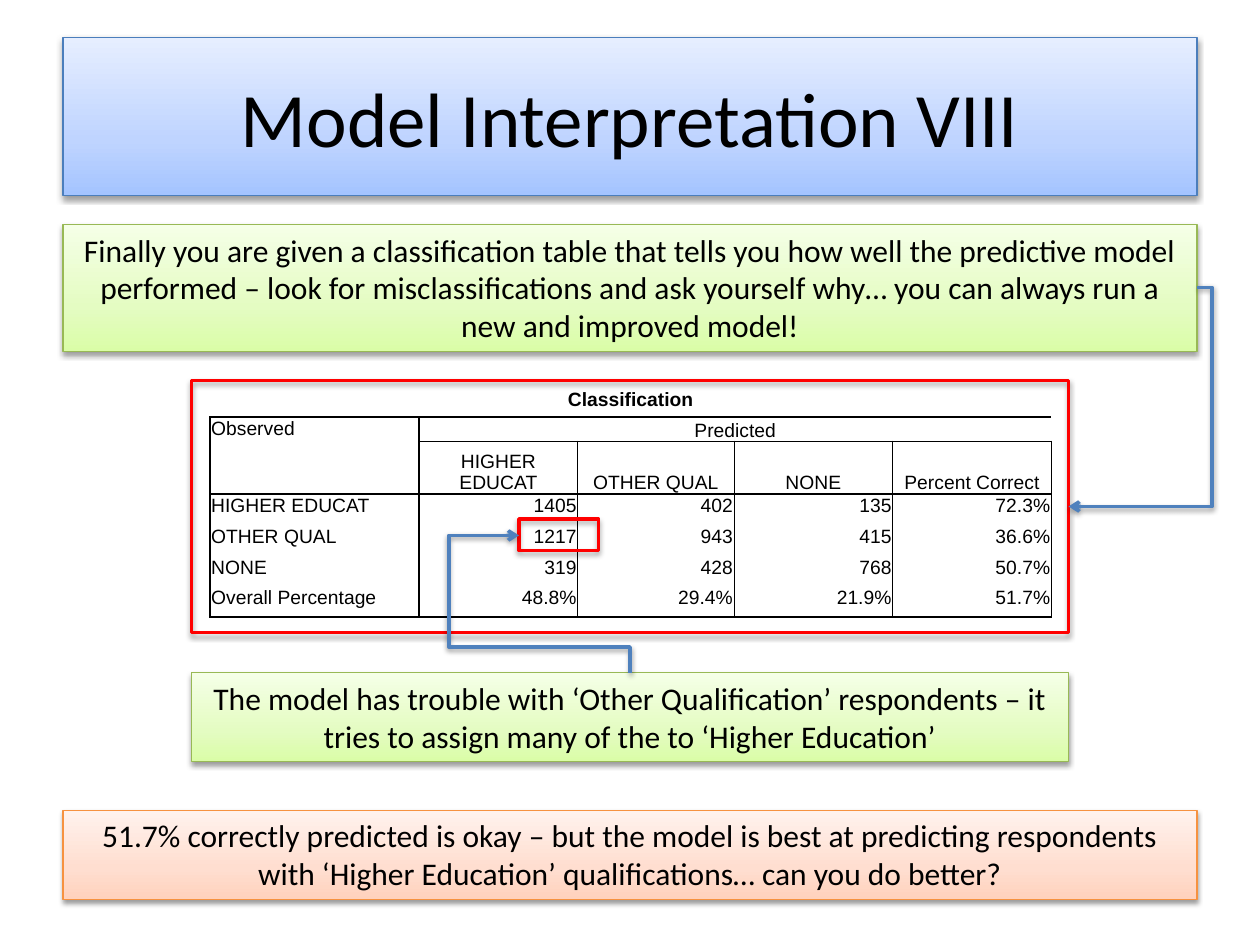
"""Build the slide that interprets the classification table of a predictive model."""
from lxml.etree import SubElement
from pptx import Presentation
from pptx.dml.color import RGBColor
from pptx.enum.shapes import MSO_CONNECTOR, MSO_SHAPE
from pptx.enum.text import MSO_ANCHOR, MSO_AUTO_SIZE, PP_ALIGN
from pptx.oxml.ns import qn
from pptx.util import Pt

LEFT, CENTER, RIGHT = PP_ALIGN.LEFT, PP_ALIGN.CENTER, PP_ALIGN.RIGHT
TOP, MIDDLE, BOTTOM = MSO_ANCHOR.TOP, MSO_ANCHOR.MIDDLE, MSO_ANCHOR.BOTTOM
RECTANGLE, ELBOW = MSO_SHAPE.RECTANGLE, MSO_CONNECTOR.ELBOW
GROW = MSO_AUTO_SIZE.SHAPE_TO_FIT_TEXT

COLORS = {"text": "000000", "blue": "4B7EBC", "green": "98B955", "orange": "F69240",
          "red": "FF0000", "arrow": "4F81BD"}
GRADIENTS = {"blue": ("A4C4FF", "BFD4FF", "E6EEFF"),
             "green": ("DAFDA7", "E4FCC2", "F5FFE7"),
             "orange": ("FFD2BD", "FFDED0", "FFF2ED")}
STOPS = (0, 35, 100)

TITLE = ("Model Interpretation VIII", (36, 21.6, 648, 90))
NOTES = [
    ("Finally you are given a classification table that tells you how well the predictive "
     "model performed – look for misclassifications and ask yourself why… you can always "
     "run a new and improved model!", "green", (36, 128.2, 648, 72.7)),
    ("The model has trouble with ‘Other Qualification’ respondents – it tries to assign "
     "many of the to ‘Higher Education’", "green", (109.4, 384.5, 501.1, 50.9)),
    ("51.7% correctly predicted is okay – but the model is best at predicting respondents "
     "with ‘Higher Education’ qualifications… can you do better?", "orange",
     (36, 463, 648, 50.9)),
]
FRAMES = [(109.4, 217.4, 501.1, 144), (296.6, 296.6, 45.4, 18)]
ARROWS = [
    {"ends": (684, 164.2, 610.6, 289.4), "preset": "bentConnector3", "turn": 0,
     "bends": (-11800,)},
    {"ends": (289.05, 376.95, 367.55, 313.55), "preset": "bentConnector4", "turn": 270,
     "bends": (18800, 163300)},
]

ROWS = [
    ["Classification", "", "", "", ""],
    ["Observed", "Predicted", "", "", ""],
    ["", "HIGHER EDUCAT", "OTHER QUAL", "NONE", "Percent Correct"],
    ["HIGHER EDUCAT", "1405", "402", "135", "72.3%"],
    ["OTHER QUAL", "1217", "943", "415", "36.6%"],
    ["NONE", "319", "428", "768", "50.7%"],
    ["Overall Percentage", "48.8%", "29.4%", "21.9%", "51.7%"],
]
MERGES = [((0, 0), (0, 4)), ((1, 0), (2, 0)), ((1, 1), (1, 4))]
TABLE_AT = (120, 217.4)
COLUMN_WIDTHS = (119.5, 90.7, 89.3, 90.7, 90.7)
ROW_HEIGHTS = (21, 13.7, 30.2) + (17.6,) * 4
HORIZONTAL_RULES = (0, 1, 0.5, 1, 0, 0, 0, 1)
VERTICAL_RULES = (1, 1, 0.5, 0.5, 0.5, 1)


def points(values):
    return [Pt(value) for value in values]


def apply(target, values):
    for name, value in values.items():
        setattr(target, name, value)


def write(frame, text, align, size, font="Calibri", bold=False):
    para = frame.paragraphs[0]
    para.alignment = align
    span = para.add_run()
    span.text = text
    apply(span.font, {"name": font, "size": Pt(size), "bold": bold})
    span.font.color.rgb = RGBColor.from_string(COLORS["text"])


def outline(item, color, width):
    item.line.color.rgb = RGBColor.from_string(COLORS[color])
    item.line.width = Pt(width)


def add_shadow(item, alpha=38000, distance=1.6):
    effects = SubElement(item._element.spPr, qn("a:effectLst"))
    shadow = SubElement(effects, qn("a:outerShdw"), blurRad=str(Pt(3.1)),
                        dist=str(Pt(distance)), dir="5400000", rotWithShape="0")
    tint = SubElement(shadow, qn("a:srgbClr"), val=COLORS["text"])
    SubElement(tint, qn("a:alpha"), val=str(alpha))


def style_panel(box, color):
    box.fill.gradient()
    box.fill.gradient_angle = 90
    stops = box._element.spPr.find(".//" + qn("a:gsLst"))
    for stop in list(stops):
        stops.remove(stop)
    for position, tint in zip(STOPS, GRADIENTS[color]):
        stop = SubElement(stops, qn("a:gs"), pos=str(position * 1000))
        SubElement(stop, qn("a:srgbClr"), val=tint)
    outline(box, color, 0.75)
    add_shadow(box)


def add_title(page):
    text, area = TITLE
    title = page.shapes.title
    apply(title, dict(zip(("left", "top", "width", "height"), points(area))))
    style_panel(title, "blue")
    title.text_frame.vertical_anchor = MIDDLE
    write(title.text_frame, text, CENTER, 44)


def add_note(page, text, color, area):
    box = page.shapes.add_shape(RECTANGLE, *points(area))
    style_panel(box, color)
    apply(box.text_frame, {"word_wrap": True, "auto_size": GROW, "vertical_anchor": TOP})
    write(box.text_frame, text, CENTER, 18)


def add_frame(page, area):
    box = page.shapes.add_shape(RECTANGLE, *points(area))
    box.fill.background()
    outline(box, "red", 2)
    add_shadow(box, 35000, 1.8)


def add_arrow(page, ends, preset, turn, bends):
    arrow = page.shapes.add_connector(ELBOW, *points(ends))
    properties = arrow._element.spPr
    properties.find(qn("a:xfrm")).set("rot", str(turn * 60000))
    geometry = properties.find(qn("a:prstGeom"))
    geometry.set("prst", preset)
    guides = geometry.find(qn("a:avLst"))
    if guides is None:
        guides = SubElement(geometry, qn("a:avLst"))
    for number, bend in enumerate(bends, 1):
        SubElement(guides, qn("a:gd"), name=f"adj{number}", fmla=f"val {bend}")
    outline(arrow, "arrow", 2)
    SubElement(properties.find(qn("a:ln")), qn("a:tailEnd"), type="arrow")
    add_shadow(arrow)


def border_widths(row, column):
    sides = {"L": VERTICAL_RULES[column], "R": VERTICAL_RULES[column + 1],
             "T": HORIZONTAL_RULES[row], "B": HORIZONTAL_RULES[row + 1]}
    if row == 0:
        sides.update(L=0, R=0)
    if row == 1 and column > 1:
        sides["L"] = 0
    if row == 1 and 0 < column < 4:
        sides["R"] = 0
    if column == 0 and row in (1, 2):
        sides["B" if row == 1 else "T"] = 0
    return sides


def add_borders(cell, sides):
    properties = cell._tc.get_or_add_tcPr()
    for side, width in sides.items():
        edge = SubElement(properties, qn(f"a:ln{side}"), w=str(Pt(width)))
        if width:
            fill = SubElement(edge, qn("a:solidFill"))
            SubElement(fill, qn("a:srgbClr"), val=COLORS["text"])
        else:
            SubElement(edge, qn("a:noFill"))


def cell_layout(row, column):
    if row == 0:
        return CENTER, MIDDLE
    if column == 0:
        return LEFT, TOP
    return (CENTER, BOTTOM) if row < 3 else (RIGHT, TOP)


def add_classification(page):
    size = (sum(COLUMN_WIDTHS), sum(ROW_HEIGHTS))
    table = page.shapes.add_table(len(ROWS), len(COLUMN_WIDTHS),
                                  *points(TABLE_AT + size)).table
    apply(table, {"first_row": False, "horz_banding": False})
    for column, width in zip(table.columns, COLUMN_WIDTHS):
        column.width = Pt(width)
    for row, height in zip(table.rows, ROW_HEIGHTS):
        row.height = Pt(height)
    for start, end in MERGES:
        table.cell(*start).merge(table.cell(*end))
    for row, texts in enumerate(ROWS):
        for column, text in enumerate(texts):
            cell = table.cell(row, column)
            align, anchor = cell_layout(row, column)
            apply(cell, {"margin_left": Pt(0.7), "margin_right": Pt(0.7),
                         "margin_top": Pt(0.7), "margin_bottom": 0,
                         "vertical_anchor": anchor})
            add_borders(cell, border_widths(row, column))
            cell.fill.background()
            if text:
                write(cell.text_frame, text, align, 11, "Arial", row == 0)


def main():
    deck = Presentation()
    apply(deck, {"slide_width": Pt(720), "slide_height": Pt(540)})
    page = deck.slides.add_slide(deck.slide_layouts[5])
    add_title(page)
    add_classification(page)
    for note in NOTES:
        add_note(page, *note)
    for area in FRAMES:
        add_frame(page, area)
    for arrow in ARROWS:
        add_arrow(page, **arrow)
    deck.save("out.pptx")


if __name__ == "__main__":
    main()
